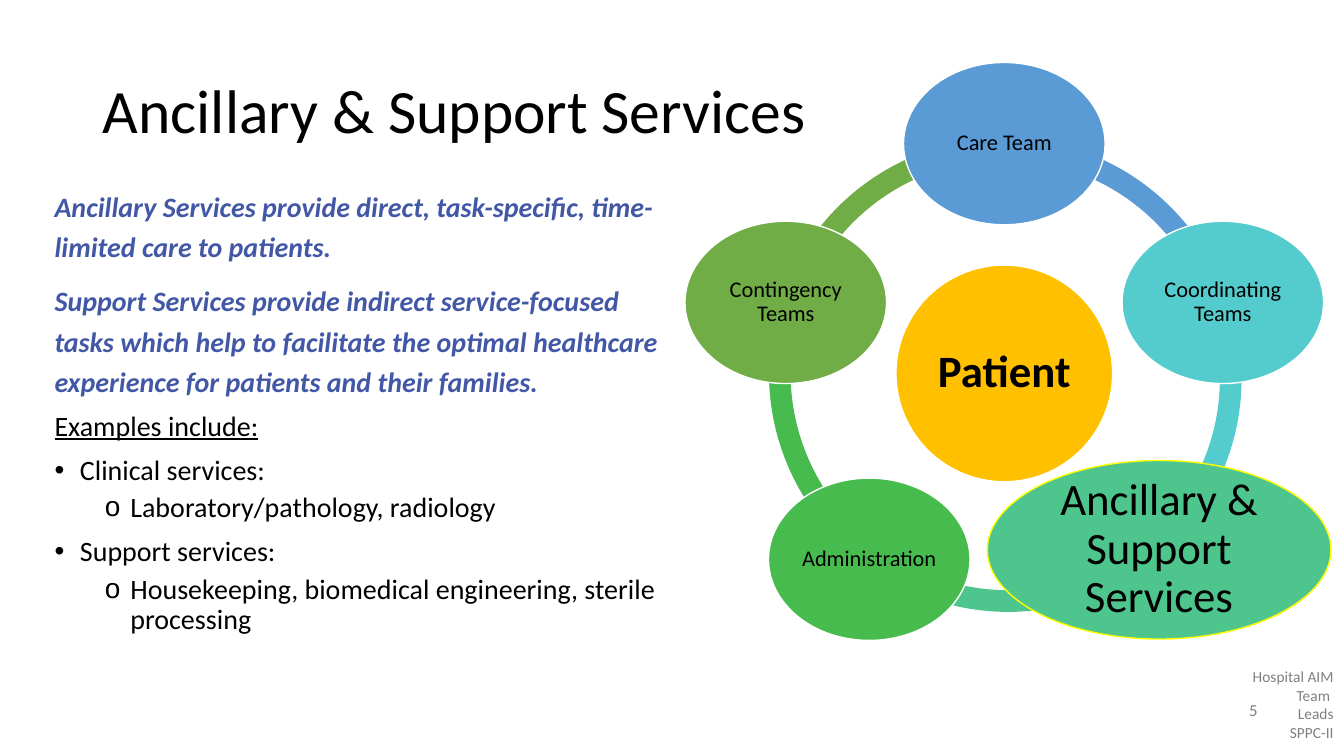
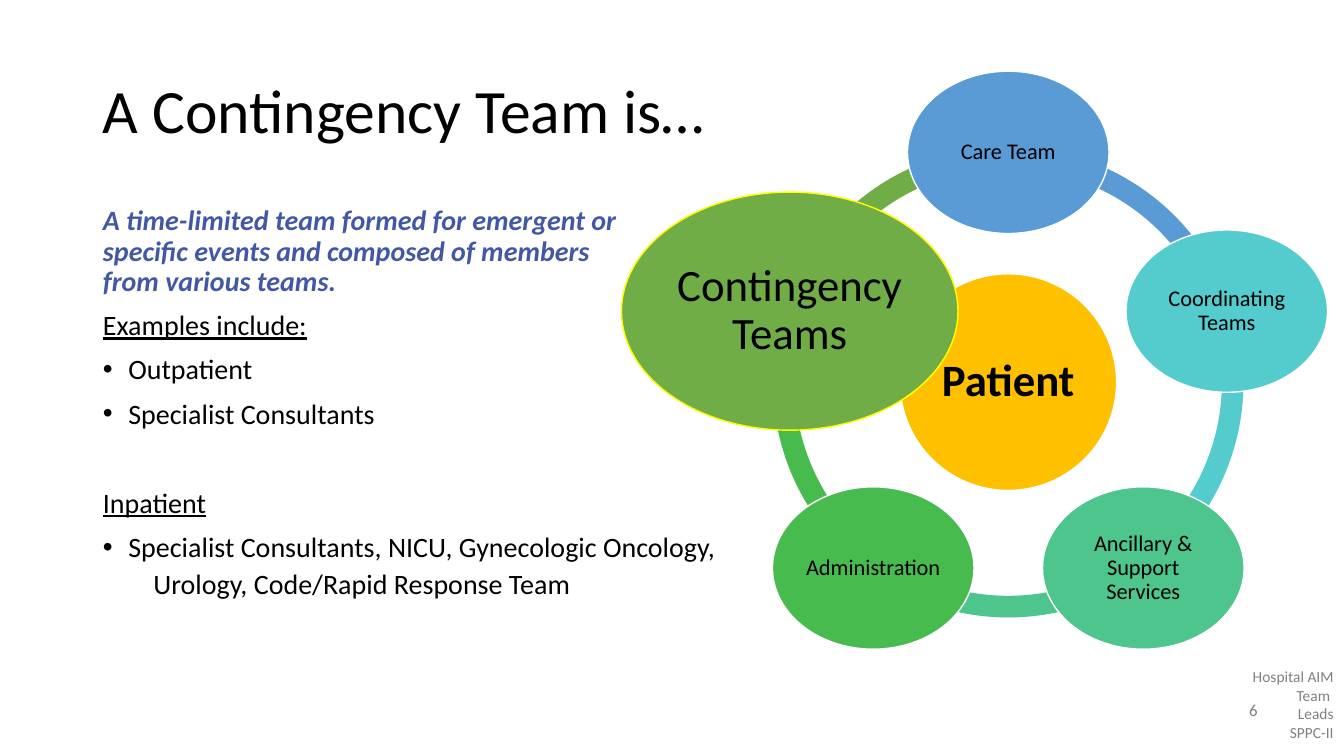
from dataclasses import dataclass, field
from math import cos, radians, sin

from lxml.etree import SubElement
from pptx import Presentation
from pptx.dml.color import RGBColor
from pptx.enum.shapes import MSO_SHAPE as SHAPE
from pptx.enum.text import MSO_ANCHOR as ANCHOR, MSO_AUTO_SIZE as AUTO, PP_ALIGN as ALIGN
from pptx.oxml.ns import qn
from pptx.util import Cm, Pt

FONT = "Calibri"
BLACK = RGBColor(0x00, 0x00, 0x00)
WHITE = RGBColor(0xFF, 0xFF, 0xFF)
GREY = RGBColor(0x80, 0x80, 0x80)
INDIGO = RGBColor(0x42, 0x58, 0xA6)
GOLD = RGBColor(0xFF, 0xC0, 0x00)
YELLOW = RGBColor(0xFF, 0xFF, 0x00)
BLUE = RGBColor(0x5B, 0x9B, 0xD5)
TEAL = RGBColor(0x54, 0xCC, 0xCD)
MINT = RGBColor(0x4D, 0xC5, 0x8D)
GREEN = RGBColor(0x48, 0xBB, 0x4F)
OLIVE = RGBColor(0x70, 0xAD, 0x47)

TEAMS = [
    ("Care Team", BLUE),
    ("Coordinating Teams", TEAL),
    ("Ancillary & Support Services", MINT),
    ("Administration", GREEN),
    ("Contingency Teams", OLIVE),
]
RING_SIZE, RING_RADIUS, HUB_SIZE = 11.86, 5.79, 5.46
NODE_SIZE = (5.08, 4.09)
ARC_THICKNESS = 0.046
ADJ_PER_DEGREE = 0.6


@dataclass
class ListStyle:
    level: int = 0
    left: float = 0
    hang: float = 0
    bullet: str = ""
    before: int = 10
    underline: bool = False


STYLES = {
    "lead": ListStyle(),
    "head": ListStyle(underline=True),
    "next_head": ListStyle(underline=True, before=42),
    "bullet": ListStyle(left=0.64, hang=0.64, bullet="•"),
    "sub": ListStyle(level=1, left=1.91, hang=0.64, bullet="o", before=5),
    "continued": ListStyle(level=1, left=1.27, before=5),
}


@dataclass
class Highlight:
    team: str
    size: tuple
    shift: tuple = (0, 0)
    arcs: dict = field(default_factory=dict)


def place(shape, box):
    shape.left, shape.top, shape.width, shape.height = (Cm(v) for v in box)


def style_font(p, size, color, bold=False, italic=False, underline=False):
    for r in p.runs:
        f = r.font
        f.name, f.size, f.color.rgb = FONT, Pt(size), color
        f.bold, f.italic, f.underline = bold, italic, underline


def add_title(s, text, box):
    sp = s.shapes.title
    place(sp, box)
    tf = sp.text_frame
    tf.text = text
    tf.auto_size, tf.vertical_anchor = AUTO.NONE, ANCHOR.MIDDLE
    p = tf.paragraphs[0]
    p.alignment, p.line_spacing = ALIGN.LEFT, 0.9
    style_font(p, 44, BLACK)


def add_body(s, items, box, lead_spacing):
    sp = s.placeholders[1]
    place(sp, box)
    tf = sp.text_frame
    tf.auto_size = AUTO.NONE
    for i, (kind, text) in enumerate(items):
        p = tf.add_paragraph() if i else tf.paragraphs[0]
        style, lead = STYLES[kind], kind == "lead"
        p.text, p.level = text, style.level
        pPr = p._p.get_or_add_pPr()
        pPr.set("marL", str(Cm(style.left)))
        pPr.set("indent", str(-Cm(style.hang)))
        if style.bullet:
            SubElement(pPr, qn("a:buChar")).set("char", style.bullet)
        else:
            SubElement(pPr, qn("a:buNone"))
        p.line_spacing = lead_spacing if lead else 0.9
        p.space_before = Pt(style.before if i else 0)
        style_font(p, 20, INDIGO if lead else BLACK, lead, lead, style.underline)


def add_arc(s, box, start, end, color):
    sp = s.shapes.add_shape(SHAPE.BLOCK_ARC, *(Cm(v) for v in box))
    for i, value in enumerate((start * ADJ_PER_DEGREE, end * ADJ_PER_DEGREE, ARC_THICKNESS)):
        sp.adjustments[i] = value
    sp.shadow.inherit = False
    sp.fill.solid()
    sp.fill.fore_color.rgb = color
    sp.line.fill.background()


def add_oval(s, center, size, text, color, line=WHITE, font_size=16, bold=False):
    (x, y), (w, h) = center, size
    sp = s.shapes.add_shape(SHAPE.OVAL, Cm(x - w / 2), Cm(y - h / 2), Cm(w), Cm(h))
    sp.shadow.inherit = False
    sp.fill.solid()
    sp.fill.fore_color.rgb = color
    sp.line.color.rgb, sp.line.width = line, Pt(1)
    tf = sp.text_frame
    tf.text = text
    tf.word_wrap, tf.vertical_anchor = True, ANCHOR.MIDDLE
    inset = Cm(0.1 if font_size > 16 else 0.05)
    tf.margin_left = tf.margin_right = tf.margin_top = tf.margin_bottom = inset
    p = tf.paragraphs[0]
    p.alignment, p.line_spacing = ALIGN.CENTER, 0.9
    style_font(p, font_size, BLACK, bold)


def add_team_ring(s, left, top, highlight):
    cx, cy = left + RING_SIZE / 2, top + RING_SIZE / 2
    step = 360 / len(TEAMS)
    angles = [(270 + i * step) % 360 for i in range(len(TEAMS))]
    for (team, color), angle in zip(TEAMS, angles):
        default = (0, 0, angle, (angle + step) % 360)
        dx, dy, start, end = highlight.arcs.get(team, default)
        add_arc(s, (left + dx, top + dy, RING_SIZE, RING_SIZE), start, end, color)
    add_oval(s, (cx, cy), (HUB_SIZE, HUB_SIZE), "Patient", GOLD, font_size=32, bold=True)
    for (team, color), angle in zip(TEAMS, angles):
        x = cx + RING_RADIUS * cos(radians(angle))
        y = cy + RING_RADIUS * sin(radians(angle))
        if team == highlight.team:
            dx, dy = highlight.shift
            add_oval(s, (x + dx, y + dy), highlight.size, team, color, YELLOW, 32)
        else:
            add_oval(s, (x, y), NODE_SIZE, team, color)


def add_label(s, lines, box, size, align, anchor=ANCHOR.TOP):
    tf = s.shapes.add_textbox(*(Cm(v) for v in box)).text_frame
    tf.word_wrap, tf.vertical_anchor = True, anchor
    tf.text = "\n".join(lines)
    for p in tf.paragraphs:
        p.alignment = align
        style_font(p, size, GREY)


def add_footer(s, number):
    add_label(s, ["Hospital AIM Team ", "Leads", "SPPC-II"],
              (30.91, 16.69, 2.95, 2.13), 11, ALIGN.RIGHT)
    add_label(s, [str(number)], (30.99, 17.37, 1.19, 1.02), 12, ALIGN.CENTER, ANCHOR.MIDDLE)


def add_team_slide(prs, number, title, items, body_box, lead_spacing, ring_at, highlight):
    s = prs.slides.add_slide(prs.slide_layouts[1])
    add_title(s, title, (2.34, 1.02, 29.21, 3.68))
    add_body(s, items, body_box, lead_spacing)
    add_team_ring(s, *ring_at, highlight)
    add_footer(s, number)


def main():
    prs = Presentation()
    prs.slide_width, prs.slide_height = Cm(33.87), Cm(19.05)

    add_team_slide(
        prs, 5, "Ancillary & Support Services",
        [
            ("lead", "Ancillary Services provide direct, task-specific, time-limited care to patients."),
            ("lead", "Support Services provide indirect service-focused \n"
                     "tasks which help to facilitate the optimal healthcare "
                     "experience for patients and their families."),
            ("head", "Examples include:"),
            ("bullet", "Clinical services:"),
            ("sub", "Laboratory/pathology, radiology"),
            ("bullet", "Support services:"),
            ("sub", "Housekeeping, biomedical engineering, sterile processing"),
        ],
        (1.12, 4.47, 16.38, 11.71), 1.2, (19.38, 3.48),
        Highlight("Ancillary & Support Services", (8.66, 4.5), (0.5, -0.24), {
            "Coordinating Teams": (0.05, 0.13, 340.75, 48.2),
            "Ancillary & Support Services": (0.1, 0.08, 48.94, 127.18),
        }),
    )
    add_team_slide(
        prs, 6, "A Contingency Team is…",
        [
            ("lead", "A time-limited team formed for emergent or \n"
                     "specific events and composed of members \nfrom various teams."),
            ("head", "Examples include:"),
            ("bullet", "Outpatient"),
            ("bullet", "Specialist Consultants"),
            ("next_head", "Inpatient"),
            ("bullet", "Specialist Consultants, NICU, Gynecologic Oncology,"),
            ("continued", "Urology, Code/Rapid Response Team"),
        ],
        (2.34, 5.08, 29.21, 11.1), 0.9, (19.48, 3.7),
        Highlight("Contingency Teams", (8.48, 6)),
    )
    prs.save("out.pptx")


if __name__ == "__main__":
    main()
